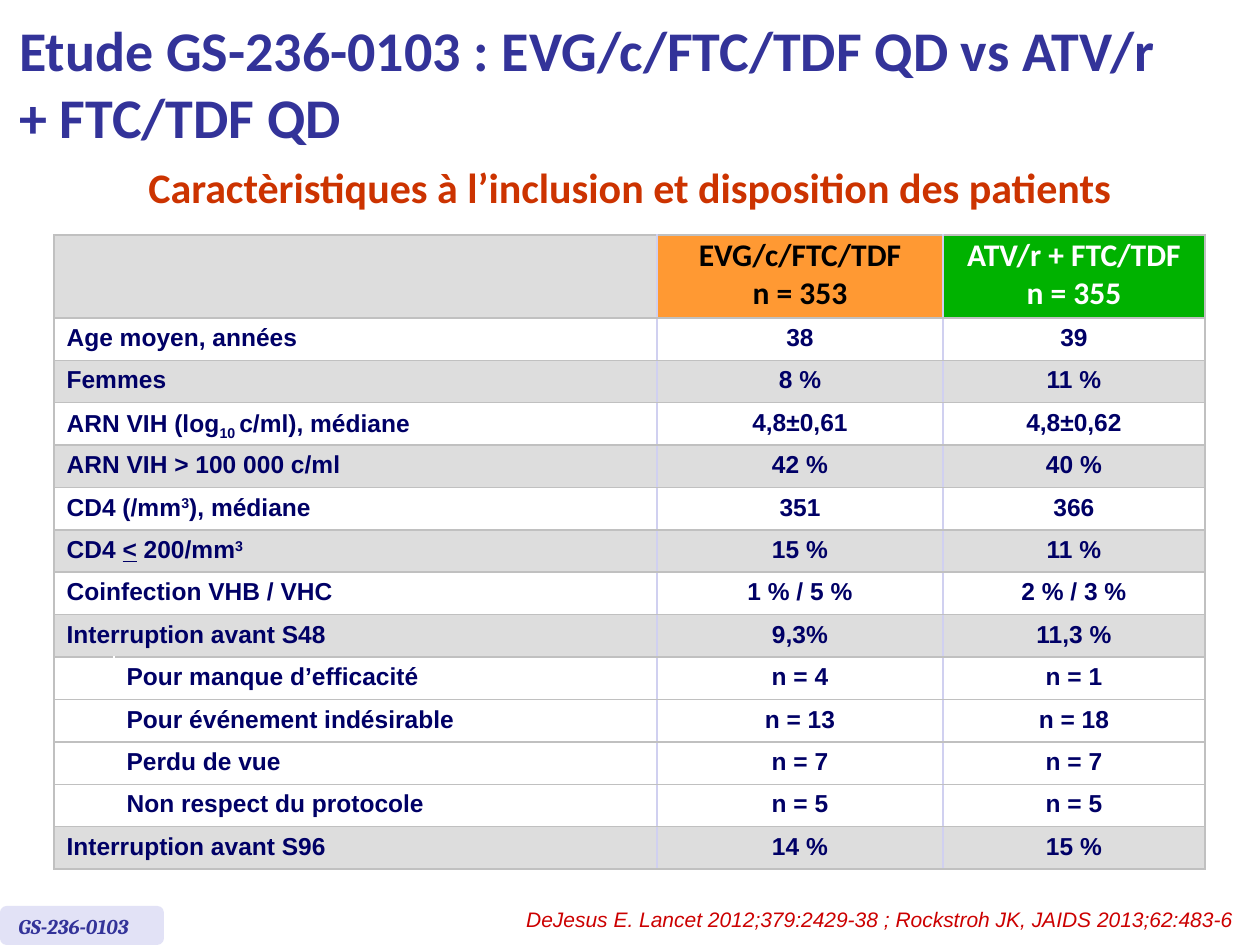
"""Build the baseline characteristics slide of study GS-236-0103."""
from lxml import etree
from pptx import Presentation
from pptx import util as u
from pptx.dml.color import RGBColor
from pptx.enum import shapes, text
from pptx.oxml.ns import qn

PX = 914400 / 126
HUES = {"title": "333399", "sub": "CC3300", "cite": "CC0000", "tag": "E2E2F6",
        "ink": "000066", "grey": "DDDDDD", "white": "FFFFFF", "black": "000000",
        "orange": "FF9933", "green": "00B200", "rule": "C0C0C0", "split": "D0D0F0"}
LEFT, MID, RIGHT = text.PP_ALIGN.LEFT, text.PP_ALIGN.CENTER, text.PP_ALIGN.RIGHT

TITLE = "Etude GS-236-0103 : EVG/c/FTC/TDF QD vs ATV/r \v+ FTC/TDF QD"
SUB = "Caractèristiques à l’inclusion et disposition des patients"
CITE = "DeJesus E. Lancet 2012;379:2429-38 ; Rockstroh JK, JAIDS 2013;62:483-6"
TAG = "GS-236-0103"
ARMS = [("EVG/c/FTC/TDF\nn = 353", "orange", "black"),
        ("ATV/r + FTC/TDF\nn = 355", "green", "white")]
MARKS = {"_": ("baseline", "-25000"), "^": ("baseline", "30000"), "~": ("u", "sng")}
MAIN, ITEM = 0, 1
ROWS = [
    (MAIN, "Age moyen, années", "38", "39"),
    (MAIN, "Femmes", "8 %", "11 %"),
    (MAIN, "ARN VIH (log|_10 |c/ml), médiane", "4,8±0,61", "4,8±0,62"),
    (MAIN, "ARN VIH > 100 000 c/ml", "42 %", "40 %"),
    (MAIN, "CD4 (/mm|^3|), médiane", "351", "366"),
    (MAIN, "CD4 |~<| 200/mm|^3", "15 %", "11 %"),
    (MAIN, "Coinfection VHB / VHC", "1 % / 5 %", "2 % / 3 %"),
    (MAIN, "Interruption avant S48", "9,3%", "11,3 %"),
    (ITEM, "Pour manque d’efficacité", "n = 4", "n = 1"),
    (ITEM, "Pour événement indésirable", "n = 13", "n = 18"),
    (ITEM, "Perdu de vue", "n = 7", "n = 7"),
    (ITEM, "Non respect du protocole", "n = 5", "n = 5"),
    (MAIN, "Interruption avant S96", "14 %", "15 %"),
]
COLS = [60, 543, 286, 262]
LEFT_X, TOP, HIGH, HEAD = 54, 235, 634, 83


def px(*vals):
    return [u.Emu(round(v * PX)) for v in vals]


def rgb(hue):
    return RGBColor.from_string(HUES[hue])


def style(font, face, size, hue, bold=True, slant=False):
    font.name, font.size, font.bold, font.italic = face, u.Pt(size), bold, slant
    font.color.rgb = rgb(hue)


def label(slide, box, words, look, align=LEFT, anchor=text.MSO_ANCHOR.TOP):
    frame = slide.shapes.add_textbox(*px(*box)).text_frame
    frame.word_wrap, frame.vertical_anchor = True, anchor
    frame.text = words
    para = frame.paragraphs[0]
    para.alignment = align
    for run in para.runs:
        style(run.font, *look)
    return para


def fill(cell, hue, col):
    cell.fill.solid()
    cell.fill.fore_color.rgb = rgb(hue)
    cell.vertical_anchor = text.MSO_ANCHOR.MIDDLE
    edges = {"L": "split" if col > 1 else "rule", "R": "split" if col < 3 else "rule",
             "T": "rule", "B": "rule"}
    if col == 0:
        del edges["R"]
    if col == 1:
        del edges["L"]
    props = cell._tc.get_or_add_tcPr()
    for spot, (side, tone) in enumerate(edges.items()):
        line = etree.Element(qn("a:ln" + side), w="12700")
        paint = etree.SubElement(line, qn("a:solidFill"))
        etree.SubElement(paint, qn("a:srgbClr"), val=HUES[tone])
        props.insert(spot, line)


def write(cell, words, look, align, pitch):
    for spot, part in enumerate(words.split("\n")):
        frame = cell.text_frame
        para = frame.add_paragraph() if spot else frame.paragraphs[0]
        para.alignment, para.line_spacing = align, pitch
        if spot:
            para.space_before = u.Pt(4)
        for bit in filter(None, part.split("|")):
            run = para.add_run()
            mark = MARKS.get(bit[0])
            run.text = bit[1:] if mark else bit
            style(run.font, *look)
            if mark:
                run._r.get_or_add_rPr().set(*mark)
        if not part:
            etree.SubElement(para._p, qn("a:endParaRPr"), sz="1400")


def grid(slide):
    frame = slide.shapes.add_table(len(ROWS) + 1, len(COLS),
                                   *px(LEFT_X, TOP, sum(COLS), HIGH))
    table = frame.table
    for col, wide in zip(table.columns, COLS):
        col.width = px(wide)[0]
    step = (HIGH - HEAD) / len(ROWS)
    for num, row in enumerate(table.rows):
        row.height = px(step if num else HEAD)[0]
    for col in (0, 1):
        fill(table.cell(0, col), "grey", col)
    table.cell(0, 0).merge(table.cell(0, 1))
    for col, (words, back, ink) in enumerate(ARMS, 2):
        fill(table.cell(0, col), back, col)
        write(table.cell(0, col), words, ("Calibri", 18, ink), MID, 0.8)
    dark = True
    for num, (kind, name, *vals) in enumerate(ROWS, 1):
        dark = kind == MAIN and not dark
        cells = [name, "", *vals] if kind == MAIN else ["", name, *vals]
        for col, words in enumerate(cells):
            cell = table.cell(num, col)
            fill(cell, "grey" if dark else "white", col)
            write(cell, words, ("Arial", 14, "ink"), MID if col > 1 else LEFT, 0.9)
        if kind == MAIN:
            table.cell(num, 0).merge(table.cell(num, 1))


def main():
    deck = Presentation()
    deck.slide_width, deck.slide_height = px(1260, 945)
    slide = deck.slides.add_slide(deck.slide_layouts[6])
    grid(slide)
    label(slide, (421, 900, 825, 38), CITE, ("Arial", 12, "cite", False, True), RIGHT)
    tag = slide.shapes.add_shape(shapes.MSO_SHAPE.ROUNDED_RECTANGLE, *px(0, 906, 164, 39))
    tag.shadow.inherit = False
    tag.fill.solid()
    tag.fill.fore_color.rgb = rgb("tag")
    tag.line.fill.background()
    label(slide, (6, 907, 151, 38), TAG, ("Cambria", 12, "title", True, True))
    para = label(slide, (54, 179, 1152, 44), SUB, ("Calibri", 24, "sub"), MID)
    para.line_spacing = u.Pt(15.2)
    label(slide, (7, 6, 1203, 153), TITLE, ("Calibri", 32, "title"),
          anchor=text.MSO_ANCHOR.MIDDLE)
    deck.save("out.pptx")


if __name__ == "__main__":
    main()
